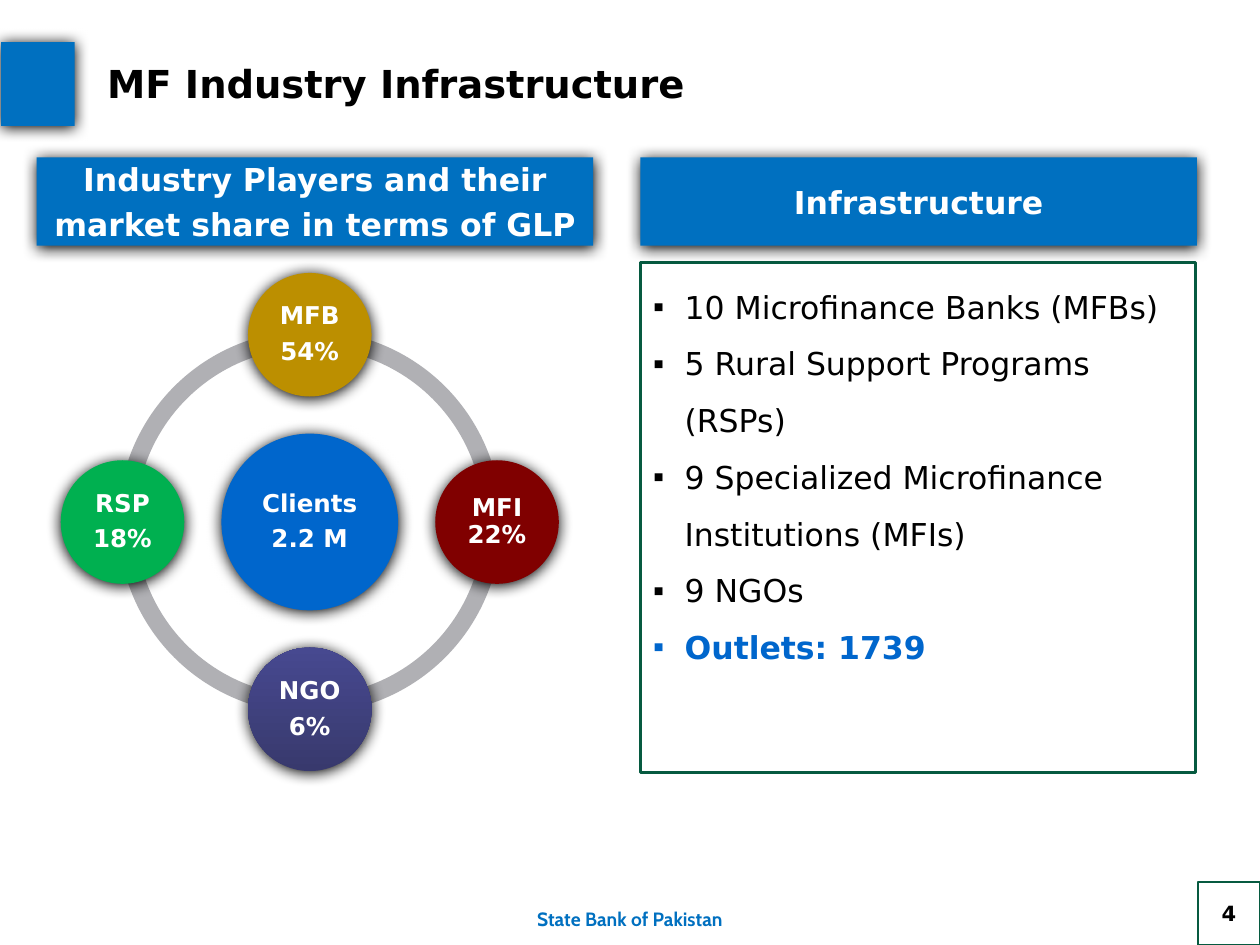
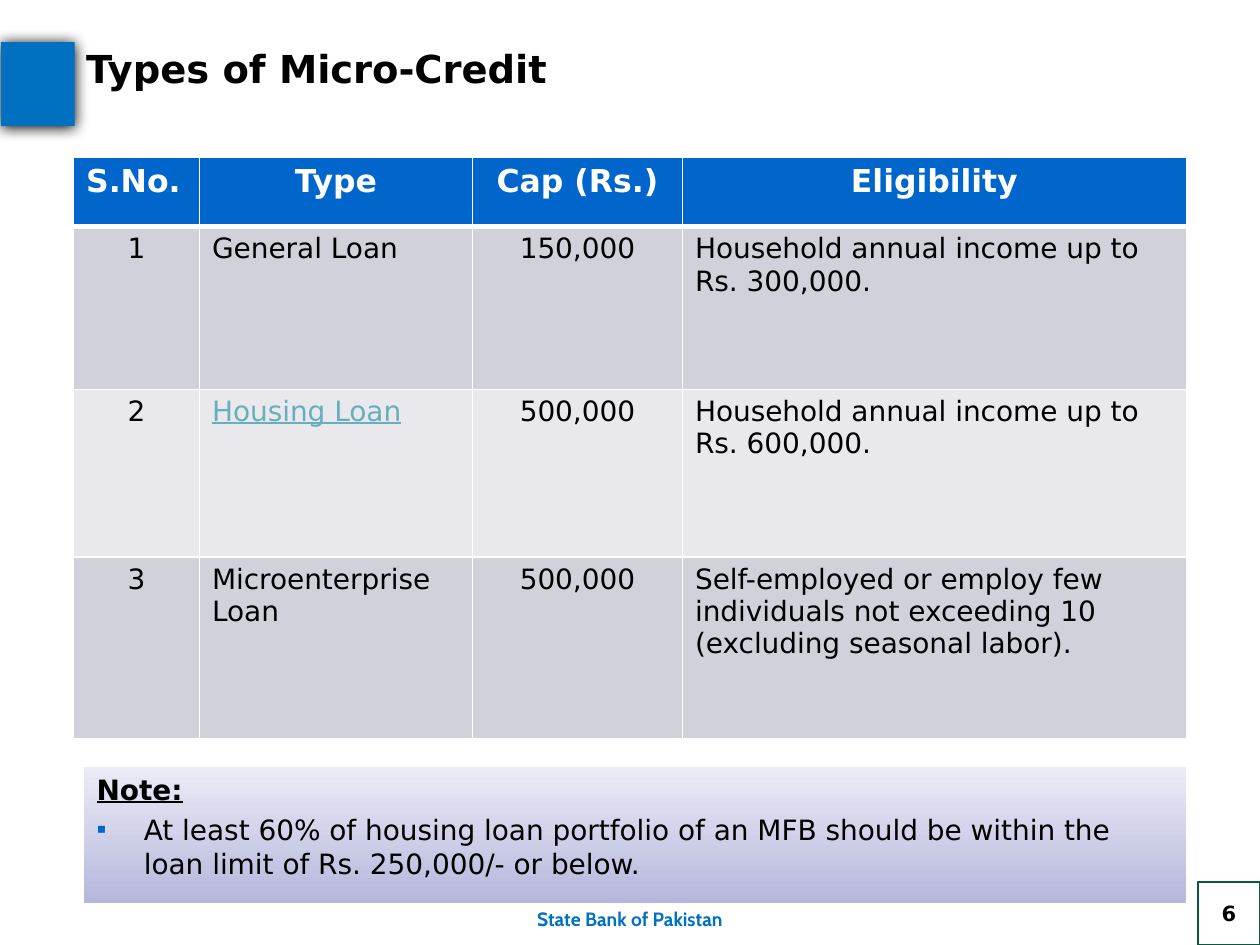
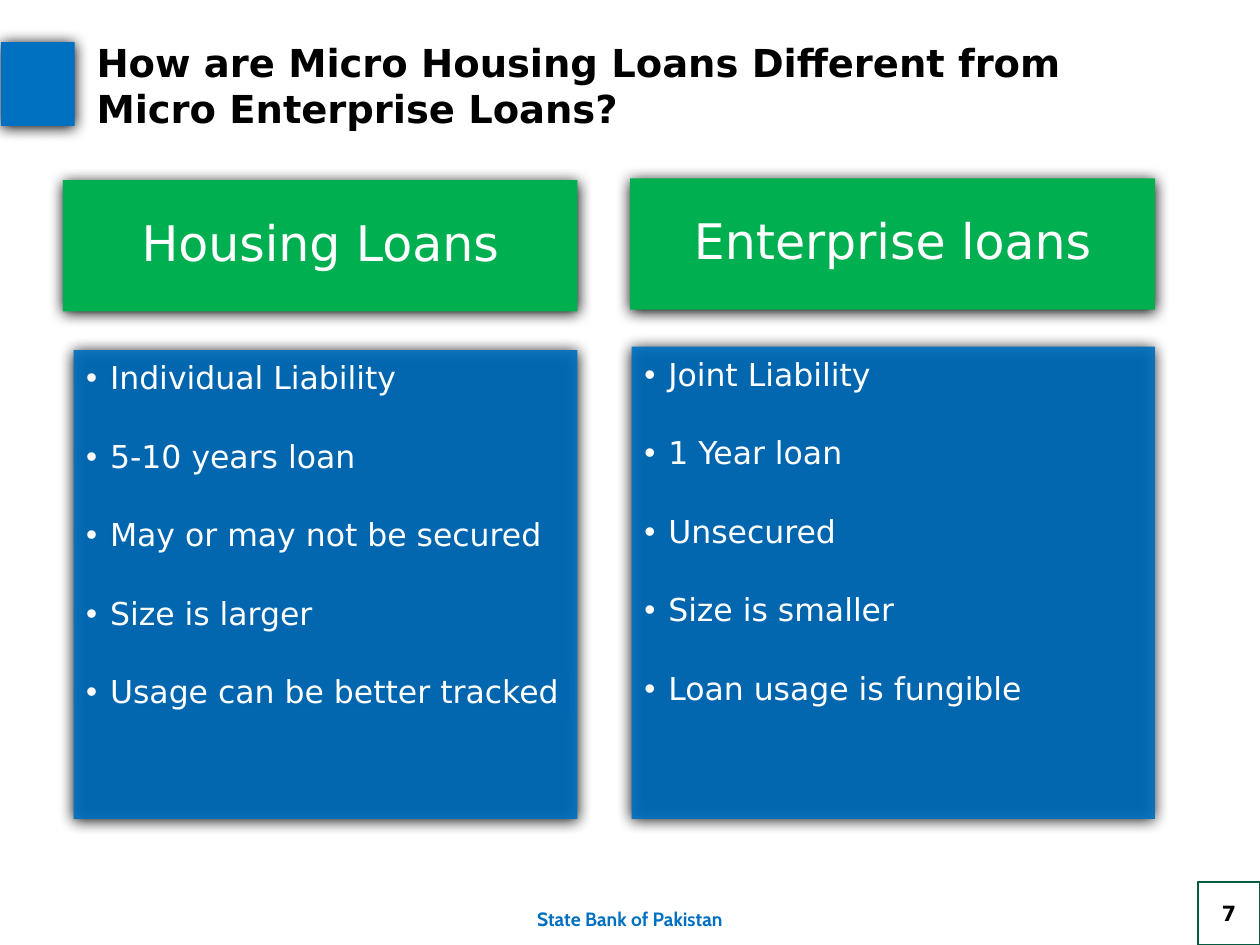
from lxml import etree
from pptx import Presentation
from pptx import util as u
from pptx.dml import color
from pptx.enum import shapes, text
from pptx.oxml import ns

BLUE = color.RGBColor(0x00, 0x70, 0xC0)
BRIGHT_BLUE = color.RGBColor(0x00, 0x66, 0xCC)
GREEN = color.RGBColor(0x00, 0xB0, 0x50)
DARK_GREEN = color.RGBColor(0x06, 0x5A, 0x40)
GOLD = color.RGBColor(0xBC, 0x8F, 0x00)
MAROON = color.RGBColor(0x80, 0x00, 0x00)
INDIGO = (color.RGBColor(0x38, 0x39, 0x6D), color.RGBColor(0x47, 0x49, 0x90))
LILAC = (color.RGBColor(0xB6, 0xB7, 0xDC), color.RGBColor(0xEB, 0xEB, 0xF6))
RING_GREY = color.RGBColor(0xB0, 0xB0, 0xB4)
ROW_DARK = color.RGBColor(0xD1, 0xD1, 0xDA)
ROW_LIGHT = color.RGBColor(0xE9, 0xE9, 0xED)
LINK_TEAL = color.RGBColor(0x67, 0xAF, 0xBD)
WHITE = color.RGBColor(0xFF, 0xFF, 0xFF)
BLACK = color.RGBColor(0x00, 0x00, 0x00)

FONT = "DejaVu Sans"
LEFT, CENTER = text.PP_ALIGN.LEFT, text.PP_ALIGN.CENTER
TOP, MIDDLE, BOTTOM = text.MSO_ANCHOR.TOP, text.MSO_ANCHOR.MIDDLE, text.MSO_ANCHOR.BOTTOM
RECT, OVAL = shapes.MSO_SHAPE.RECTANGLE, shapes.MSO_SHAPE.OVAL


def child(parent, tag, **attributes):
    """Append a namespaced child element and return it."""
    return etree.SubElement(parent, ns.qn(tag), {k: str(v) for k, v in attributes.items()})


def place(part, box):
    """Move a shape to a box of left, top, width and height in points."""
    part.left, part.top, part.width, part.height = (u.Pt(length) for length in box)


def set_bullet(paragraph, bullet, bullet_color, indent):
    """Give a paragraph a hanging indent and a bullet, or no bullet."""
    properties = paragraph._p.get_or_add_pPr()
    properties.set("marL", str(u.Pt(indent)))
    properties.set("indent", str(-u.Pt(indent)))
    if not bullet:
        child(properties, "a:buNone")
        return
    if bullet_color:
        child(child(properties, "a:buClr"), "a:srgbClr", val=bullet_color)
    child(properties, "a:buChar", char=bullet)


def write(frame, lines, **common):
    """Fill a text frame with lines; a line may be a (text, overrides) pair."""
    for index, line in enumerate(lines):
        words, own = line if isinstance(line, tuple) else (line, {})
        style = {**common, **own}
        paragraph = frame.paragraphs[0] if index == 0 else frame.add_paragraph()
        paragraph.alignment = style.get("align", LEFT)
        paragraph.line_spacing = style.get("spacing", 1.0)
        paragraph.space_before = u.Pt(style.get("before", 0) if index else 0)
        if "indent" in style:
            set_bullet(paragraph, style.get("bullet"), style.get("bullet_color"), style["indent"])
        run = paragraph.add_run()
        run.text = words
        run.font.name = style.get("font", FONT)
        run.font.size = u.Pt(style["size"])
        run.font.bold = style.get("bold", False)
        run.font.underline = style.get("underline", False)
        run.font.color.rgb = style.get("ink", BLACK)


def set_frame(part, anchor=TOP, margins=(7.2, 3.6, 7.2, 3.6)):
    """Prepare a shape's text frame for wrapped text and return it."""
    frame = part.text_frame
    frame.word_wrap = True
    frame.auto_size = text.MSO_AUTO_SIZE.NONE
    frame.vertical_anchor = anchor
    (frame.margin_left, frame.margin_top,
     frame.margin_right, frame.margin_bottom) = (u.Pt(margin) for margin in margins)
    return frame


def paint(part, fill=None, line=None, shadow=False, opacity=100):
    """Set a shape's fill (a colour or a bottom-to-top pair), line and shadow."""
    if fill is None:
        part.fill.background()
    elif isinstance(fill, color.RGBColor):
        part.fill.solid()
        part.fill.fore_color.rgb = fill
    else:
        part.fill.gradient()
        part.fill.gradient_angle = 90
        for stop, shade in zip(part.fill.gradient_stops, fill):
            stop.color.rgb = shade
    properties = part.element.spPr
    if opacity < 100:
        child(properties.find(".//" + ns.qn("a:srgbClr")), "a:alpha", val=opacity * 1000)
    if line is None:
        part.line.fill.background()
    else:
        part.line.color.rgb = line
        part.line.width = u.Pt(1.5)
    part.shadow.inherit = False
    if shadow:
        outer = child(properties.find(ns.qn("a:effectLst")), "a:outerShdw",
                      blurRad=u.Pt(8.5), dist=u.Pt(1), dir=5400000, rotWithShape=0)
        child(outer, "a:srgbClr", val=BLACK)


def add_part(slide, kind, box, **look):
    """Add a painted preset shape in a box."""
    part = slide.shapes.add_shape(kind, *(u.Pt(length) for length in box))
    paint(part, **look)
    return part


def add_framed_slide(deck, layout, heading, heading_box, number):
    """Add a slide with the shared title, accent square, footer and page number."""
    slide = deck.slides.add_slide(deck.slide_layouts[layout])
    title = slide.shapes.title
    place(title, heading_box)
    write(set_frame(title, BOTTOM), [heading], size=22, bold=True)

    footer = add_part(slide, RECT, (0, 504, 720, 36), fill=WHITE)
    write(set_frame(footer, MIDDLE, (7.2, 10, 7.2, 3.6)), ["State Bank of Pakistan"],
          size=11, font="Cabin", bold=True, ink=BLUE, align=CENTER)
    accent = add_part(slide, RECT, (0.7, 24, 42, 48), fill=BLUE, shadow=True)
    for backdrop in (footer, accent):
        title.element.addprevious(backdrop.element)

    page = add_part(slide, RECT, (684.5, 504, 35.5, 36), line=DARK_GREEN)
    write(set_frame(page, MIDDLE), [number], size=12, bold=True, align=CENTER)
    return slide


def add_header(slide, box, lines):
    """Add a blue header band."""
    header = add_part(slide, RECT, box, fill=BLUE, shadow=True)
    write(set_frame(header, MIDDLE), lines, size=18, bold=True, ink=WHITE,
          align=CENTER, before=4)


def add_circle(slide, center_x, center_y, diameter, fill, lines):
    """Add a labelled circle around a centre."""
    box = (center_x - diameter / 2, center_y - diameter / 2, diameter, diameter)
    circle = add_part(slide, OVAL, box, fill=fill, shadow=True)
    write(set_frame(circle, MIDDLE, (1.44,) * 4), lines, size=14, bold=True,
          ink=WHITE, align=CENTER, spacing=0.9, before=5.3)


def add_market_ring(slide, box):
    """Draw the clients hub, its ring and the four players around it."""
    left, top, width, height = box
    center_x, center_y = left + width / 2, top + height / 2
    ring, player = 219, 70.6
    orbit = (width - player) / 2
    ring_box = (center_x - ring / 2, center_y - ring / 2, ring, ring)
    for start in (180, 90, 0, 270):
        arc = add_part(slide, shapes.MSO_SHAPE.BLOCK_ARC, ring_box, fill=RING_GREY)
        arc.adjustments[0] = start * 0.6
        arc.adjustments[1] = (start + 90) % 360 * 0.6
        arc.adjustments[2] = 0.046
    add_circle(slide, center_x, center_y, 101, BRIGHT_BLUE, ["Clients", "2.2 M"])
    for across, down, fill, lines in (
        (0, -1, GOLD, ["MFB", "54%"]),
        (1, 0, MAROON, ["MFI 22%"]),
        (0, 1, INDIGO, ["NGO", "6%"]),
        (-1, 0, GREEN, ["RSP", "18%"]),
    ):
        add_circle(slide, center_x + across * orbit, center_y + down * orbit,
                   player, fill, lines)


def add_infrastructure_list(slide, box):
    """Fill the body placeholder with the institutions."""
    body = slide.placeholders[1]
    place(body, box)
    paint(body, line=DARK_GREEN)
    write(set_frame(body), [
        "10 Microfinance Banks (MFBs)",
        "5 Rural Support Programs (RSPs)",
        "9 Specialized Microfinance Institutions (MFIs)",
        "9 NGOs",
        ("Outlets: 1739", {"ink": BRIGHT_BLUE, "bold": True}),
    ], size=18, spacing=1.5, bullet="▪", indent=18)


def set_borders(cell, top, bottom):
    """Give a cell white borders with the given top and bottom widths."""
    properties = cell._tc.get_or_add_tcPr()
    for side, width in (("L", 1), ("R", 1), ("T", top), ("B", bottom)):
        border = child(properties, "a:ln" + side, w=u.Pt(width))
        child(child(border, "a:solidFill"), "a:srgbClr", val=WHITE)


def add_credit_table(slide, box):
    """Add the table of loan types."""
    rows = [
        ["S.No.", "Type", "Cap (Rs.)", "Eligibility"],
        ["1", "General Loan", "150,000", "Household annual income up to Rs. 300,000."],
        ["2", ("Housing Loan", {"ink": LINK_TEAL, "underline": True}), "500,000",
         "Household annual income up to Rs. 600,000."],
        ["3", "Microenterprise Loan", "500,000",
         "Self-employed or employ few individuals not exceeding 10 (excluding seasonal labor)."],
    ]
    fills = [BRIGHT_BLUE, ROW_DARK, ROW_LIGHT, ROW_DARK]
    header_align, row_align = (LEFT, CENTER, CENTER, CENTER), (CENTER, LEFT, CENTER, LEFT)
    table = slide.shapes.add_table(4, 4, *(u.Pt(length) for length in box)).table
    for column, width in zip(table.columns, (72, 156, 120, 288)):
        column.width = u.Pt(width)
    for row, height in zip(table.rows, (39.6, 92.9, 95.8, 103.7)):
        row.height = u.Pt(height)
    for r, entries in enumerate(rows):
        is_header = r == 0
        look = {"size": 18, "bold": True, "ink": WHITE} if is_header else {"size": 16}
        for c, entry in enumerate(entries):
            cell = table.cell(r, c)
            set_borders(cell, top=3 if r == 1 else 1, bottom=3 if is_header else 1)
            cell.fill.solid()
            cell.fill.fore_color.rgb = fills[r]
            write(cell.text_frame, [entry], align=(header_align if is_header else row_align)[c],
                  **look)


def add_note(slide, box):
    """Fill the body placeholder with the note under the table."""
    note = slide.placeholders[1]
    place(note, box)
    paint(note, fill=LILAC)
    write(set_frame(note), [
        ("Note:", {"bold": True, "underline": True, "bullet": None}),
        "At least 60% of housing loan portfolio of an MFB should be within the "
        "loan limit of Rs. 250,000/- or below.",
    ], size=16, before=3.5, indent=27, bullet="▪", bullet_color=BRIGHT_BLUE)


def add_loan_column(slide, box, body, list_inset, list_height, heading, points):
    """Stack a green heading over a blue list of loan features."""
    left, top, width, height = box
    header = add_part(slide, RECT, (left, top, width, 75), fill=GREEN, shadow=True)
    write(set_frame(header, MIDDLE, (16, 8.6, 16, 8.6)), [heading], size=28, ink=WHITE,
          align=CENTER, spacing=0.9)
    place(body, (left + list_inset, top + height - list_height, width - list_inset, list_height))
    paint(body, fill=BLUE, shadow=True, opacity=90)
    write(set_frame(body, TOP, (7.2, 7.2, 10, 11.5)), points, size=18, ink=WHITE,
          spacing=0.9, before=25.4, bullet="•", indent=13.7)


def build_infrastructure(deck):
    """Build the slide on industry players and infrastructure."""
    slide = add_framed_slide(deck, 1, "MF Industry Infrastructure", (54, 30.2, 576, 34), "4")
    add_header(slide, (21, 90, 318, 50.4),
               ["Industry Players and their", "market share in terms of GLP"])
    add_header(slide, (366, 90, 318, 50.4), ["Infrastructure"])
    add_market_ring(slide, (34.7, 156, 284.6, 284.6))
    add_infrastructure_list(slide, (366, 150, 317, 291.6))


def build_credit_types(deck):
    """Build the slide with the loan table and its note."""
    slide = add_framed_slide(deck, 1, "Types of Micro-Credit", (42, 21.9, 576, 34), "6")
    add_credit_table(slide, (42, 90, 636, 332))
    add_note(slide, (48, 438, 630, 78))


def build_comparison(deck):
    """Build the slide comparing housing and enterprise loans."""
    slide = add_framed_slide(
        deck, 3, "How are Micro Housing Loans Different from Micro Enterprise Loans?",
        (48, 18, 576, 60.5), "7")
    add_loan_column(slide, (36, 103, 294, 365), slide.placeholders[1], 6, 268, "Housing Loans", [
        "Individual Liability", "5-10 years loan", "May or may not be secured",
        "Size is larger", "Usage can be better tracked"])
    add_loan_column(slide, (360, 102, 300, 366), slide.placeholders[2], 1, 270,
                    "Enterprise loans", [
                        "Joint Liability", "1 Year loan", "Unsecured",
                        "Size is smaller", "Loan usage is fungible"])


def main():
    """Build and save the presentation."""
    deck = Presentation()
    deck.slide_width, deck.slide_height = u.Pt(720), u.Pt(540)
    build_infrastructure(deck)
    build_credit_types(deck)
    build_comparison(deck)
    deck.save("out.pptx")


if __name__ == "__main__":
    main()
